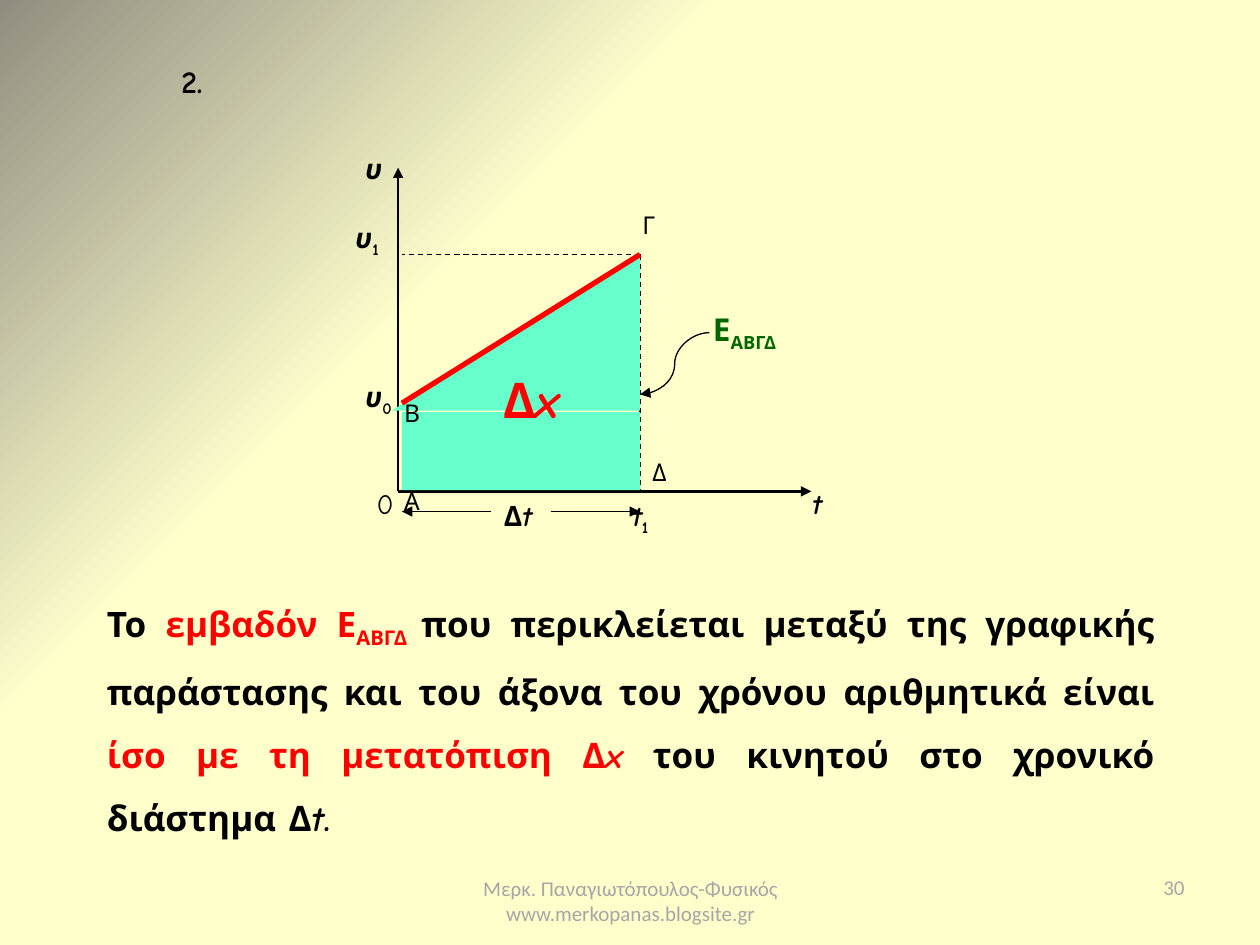
from dataclasses import dataclass

from pptx import Presentation
from pptx.dml.color import RGBColor
from pptx.enum.dml import MSO_LINE_DASH_STYLE as Dash
from pptx.enum.shapes import MSO_CONNECTOR as Connector, MSO_SHAPE as Shape
from pptx.enum.text import MSO_ANCHOR as Anchor, PP_ALIGN as Align
from pptx.oxml import parse_xml
from pptx.oxml.ns import nsdecls
from pptx.util import Inches, Pt

BLACK, RED, GREEN, GRAY, MINT = "000000", "FF0000", "006600", "A6A6A6", "66FFCC"
ORIGIN_X, ORIGIN_Y = 3.16, 3.9
START_X, END_X = 3.19, 5.08
START_Y, END_Y = 3.2, 2.02
SPAN_Y = 4.06


@dataclass
class Span:
    text: str
    size: float = 16
    color: str = BLACK
    bold: bool = True
    italic: bool = False
    subscript: bool = False
    font: str = "Comic Neue"


@dataclass
class Label:
    left: float
    top: float
    width: float
    height: float
    spans: list[Span]
    align: Align = Align.LEFT
    anchor: Anchor = Anchor.TOP
    line_spacing: float = 1.0


@dataclass
class Stroke:
    start: tuple[float, float]
    end: tuple[float, float]
    width: float = 0.75
    color: str = BLACK
    arrow: bool = False
    dashed: bool = False
    kind: Connector = Connector.STRAIGHT


def rgb(value: str) -> RGBColor:
    return RGBColor.from_string(value)


def symbol(letter: str, index: str = "") -> list[Span]:
    """Bold italic quantity with an optional upright index."""
    spans = [Span(letter, italic=True)]
    if index:
        spans.append(Span(index, subscript=True))
    return spans


def point(letter: str, left: float, top: float) -> Label:
    return Label(left, top, 0.32, 0.33, [Span(letter, 14, bold=False)])


def draw_label(page, label: Label) -> None:
    box = page.shapes.add_textbox(Inches(label.left), Inches(label.top),
                                  Inches(label.width), Inches(label.height))
    frame = box.text_frame
    frame.word_wrap = True
    frame.vertical_anchor = label.anchor
    para = frame.paragraphs[0]
    para.alignment = label.align
    para.line_spacing = label.line_spacing
    for index, span in enumerate(label.spans):
        if index and label.spans[index - 1].text.endswith("Φυσικός"):
            para.add_line_break()
        run = para.add_run()
        run.text = span.text
        font = run.font
        font.name, font.size = span.font, Pt(span.size)
        font.bold, font.italic = span.bold, span.italic
        font.color.rgb = rgb(span.color)
        if span.subscript:
            run._r.get_or_add_rPr().set("baseline", "-25000")


def draw_stroke(page, stroke: Stroke) -> None:
    ends = [Inches(value) for value in (*stroke.start, *stroke.end)]
    connector = page.shapes.add_connector(stroke.kind, *ends)
    line = connector.line
    line.color.rgb = rgb(stroke.color)
    line.width = Pt(stroke.width)
    if stroke.dashed:
        line.dash_style = Dash.DASH
    if stroke.arrow:
        line._get_or_add_ln().append(
            parse_xml(f'<a:tailEnd {nsdecls("a")} type="triangle"/>'))
    connector._element.spPr.append(parse_xml(f'<a:effectLst {nsdecls("a")}/>'))


def draw_area(page, kind: Shape, left: float, top: float, width: float, height: float):
    area = page.shapes.add_shape(kind, Inches(left), Inches(top),
                                 Inches(width), Inches(height))
    area.shadow.inherit = False
    area.fill.solid()
    area.fill.fore_color.rgb = rgb(MINT)
    area.line.fill.background()
    return area


def paint_background(page) -> None:
    """Radial gradient that darkens toward the top left corner."""
    page._element.cSld.insert(0, parse_xml(
        f'<p:bg {nsdecls("p", "a")}><p:bgPr><a:gradFill rotWithShape="1"><a:gsLst>'
        '<a:gs pos="67000"><a:srgbClr val="FFFFCC"/></a:gs>'
        '<a:gs pos="100000"><a:srgbClr val="918E81"/></a:gs></a:gsLst>'
        '<a:path path="circle"><a:fillToRect l="100000" t="100000"/></a:path>'
        '</a:gradFill><a:effectLst/></p:bgPr></p:bg>'))


AXES = [
    Stroke((ORIGIN_X, ORIGIN_Y), (ORIGIN_X, 1.33), 1.5, arrow=True),
    Stroke((ORIGIN_X, ORIGIN_Y), (6.44, ORIGIN_Y), 1.5, arrow=True),
]
GUIDES = [Stroke((END_X, END_Y), target, dashed=True)
          for target in ((START_X, END_Y), (END_X, ORIGIN_Y))]
OVERLAYS = [
    Stroke((5.63, 2.64), (END_X, 3.13), arrow=True, kind=Connector.CURVE),
    Stroke((START_X, START_Y), (END_X, END_Y), 3, RED),
    Stroke((3.9, SPAN_Y), (START_X, SPAN_Y), arrow=True),
    Stroke((4.37, SPAN_Y), (END_X, SPAN_Y), arrow=True),
]
AXIS_LABELS = [
    Label(2.8, 1.15, 0.36, 0.37, symbol("υ")),
    Label(6.35, 3.81, 0.46, 0.37, symbol("t")),
    Label(2.89, 3.81, 0.37, 0.37, [Span("0", bold=False)]),
    Label(2.8, 2.96, 0.47, 0.37, symbol("υ", "0")),
    Label(4.92, 3.91, 0.47, 0.37, symbol("t", "1")),
    Label(2.72, 1.7, 0.55, 0.37, symbol("υ", "1")),
]
AREA_LABELS = [
    point("Α", 3.11, 3.81),
    point("Β", 3.11, 3.11),
    point("Γ", 5, 1.62),
    point("Δ", END_X, 3.58),
    Label(3.9, 2.88, 0.79, 0.57, [Span("Δ", 28, RED), Span("x", 28, RED, italic=True)]),
    Label(5.56, 2.41, 1.1, 0.4,
          [Span("Ε", 18, GREEN), Span("ΑΒΓΔ", 18, GREEN, subscript=True)]),
    Label(3.9, 3.91, 0.55, 0.37, [Span("Δ"), Span("t", italic=True)]),
]
STATEMENT = Label(0.75, 4.54, 8.51, 1.62, [
    Span("Το ", 20),
    Span("εμβαδόν Ε", 20, RED),
    Span("ΑΒΓΔ ", 20, RED, subscript=True),
    Span("που περικλείεται μεταξύ της γραφικής παράστασης και του άξονα "
         "του χρόνου αριθμητικά είναι ", 20),
    Span("ίσο με τη μετατόπιση Δ", 20, RED),
    Span("x ", 20, RED, italic=True),
    Span("του κινητού στο χρονικό διάστημα Δ", 20),
    Span("t", 20, italic=True),
    Span(".", 20),
], Align.JUSTIFY, line_spacing=1.5)
NUMBER = Label(1.34, 0.44, 0.59, 0.4, [Span("2.", 18)])
FOOTER = Label(3.42, 6.95, 3.17, 0.4, [
    Span(text, 12, GRAY, bold=False, font="Calibri")
    for text in ("Μερκ. Παναγιωτόπουλος-Φυσικός", "www.merkopanas.blogsite.gr")
], Align.CENTER, Anchor.MIDDLE)
PAGE_NUMBER = Label(7.17, 6.84, 2.33, 0.4,
                    [Span("30", 12, GRAY, bold=False, font="Calibri")],
                    Align.RIGHT, Anchor.MIDDLE)


def main() -> None:
    deck = Presentation()
    deck.slide_width, deck.slide_height = Inches(10), Inches(7.5)
    page = deck.slides.add_slide(deck.slide_layouts[6])
    paint_background(page)
    for label in (FOOTER, PAGE_NUMBER, NUMBER):
        draw_label(page, label)
    for stroke in AXES:
        draw_stroke(page, stroke)
    for label in AXIS_LABELS:
        draw_label(page, label)
    for stroke in GUIDES:
        draw_stroke(page, stroke)
    draw_area(page, Shape.RECTANGLE, START_X, 3.27, END_X - START_X, 0.62)
    slope = draw_area(page, Shape.RIGHT_TRIANGLE, 3.11, 2.01, 1.97, 1.25)
    slope._element.spPr.xfrm.set("flipH", "1")
    for label in (*AREA_LABELS, STATEMENT):
        draw_label(page, label)
    for stroke in OVERLAYS:
        draw_stroke(page, stroke)
    deck.save("out.pptx")


if __name__ == "__main__":
    main()
